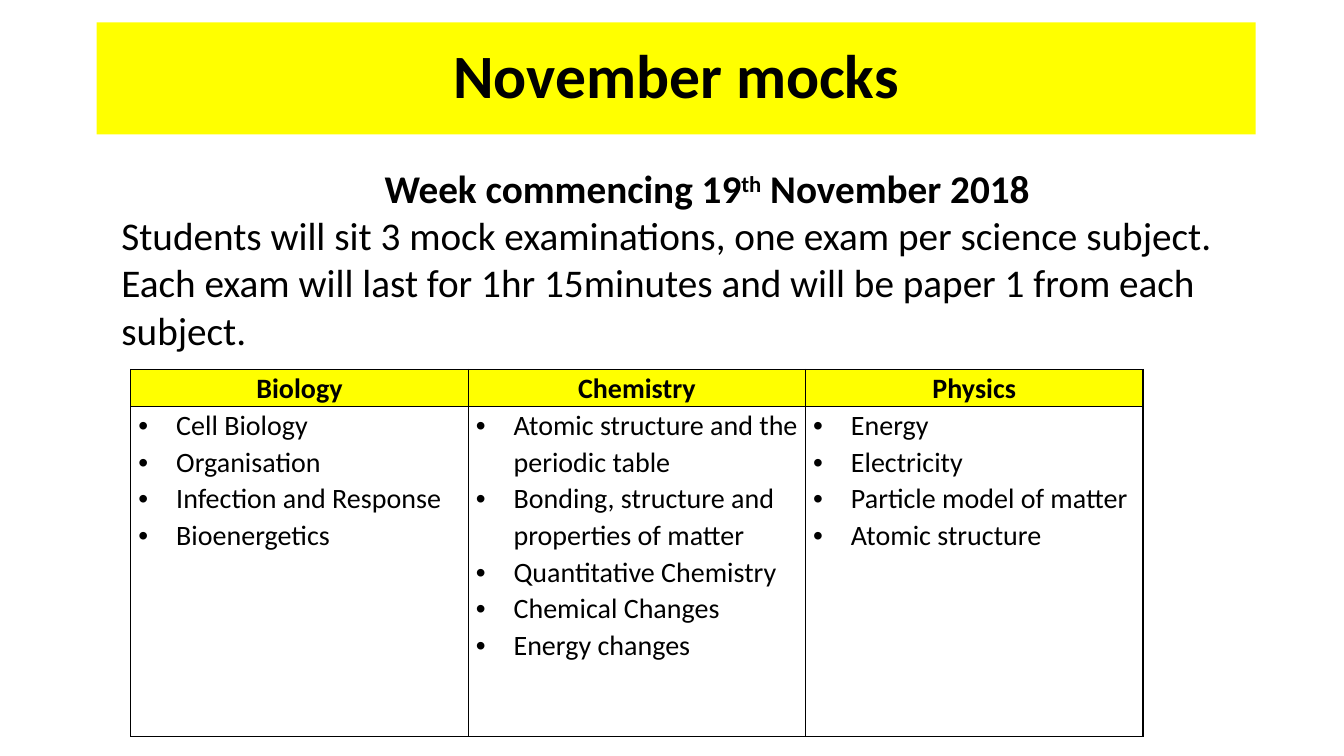
from lxml.etree import SubElement
from pptx import Presentation
from pptx.dml.color import RGBColor
from pptx.enum.text import MSO_ANCHOR, MSO_AUTO_SIZE, PP_ALIGN
from pptx.oxml.ns import qn
from pptx.util import Pt

BLACK = RGBColor(0x00, 0x00, 0x00)
YELLOW = RGBColor(0xFF, 0xFF, 0x00)

TOPICS = {
    "Biology": ["Cell Biology", "Organisation", "Infection and Response", "Bioenergetics"],
    "Chemistry": [
        "Atomic structure and the periodic table",
        "Bonding, structure and properties of matter",
        "Quantitative Chemistry",
        "Chemical Changes",
        "Energy changes",
    ],
    "Physics": ["Energy", "Electricity", "Particle model of matter", "Atomic structure"],
}


def add_text(paragraph, text, size, bold=False, superscript=False):
    run = paragraph.add_run()
    run.text = text
    run.font.name = "Calibri"
    run.font.size = Pt(size)
    run.font.bold = bold
    run.font.color.rgb = BLACK
    if superscript:
        run._r.get_or_add_rPr().set("baseline", "30000")


def format_paragraph(paragraph, align=PP_ALIGN.LEFT, spacing=1.0, bullet=None, indent=0):
    """Set alignment, line spacing and an optional hanging bullet."""
    properties = paragraph._p.get_or_add_pPr()
    properties.set("marL", str(Pt(indent)))
    properties.set("indent", str(-Pt(indent)))
    if bullet:
        SubElement(properties, qn("a:buFont"), typeface="Arial")
        SubElement(properties, qn("a:buChar"), char=bullet)
    else:
        SubElement(properties, qn("a:buNone"))
    paragraph.alignment = align
    paragraph.line_spacing = spacing
    paragraph.space_before = paragraph.space_after = Pt(0)


def add_paragraphs(frame, count):
    """Return the frame's first paragraph and enough new ones to make count."""
    return [frame.paragraphs[0]] + [frame.add_paragraph() for _ in range(count - 1)]


class MocksSlide:
    heading_size = 44
    body_size = 28
    table_size = 20
    table_spacing = 1.07

    def __init__(self, presentation):
        self.slide = presentation.slides.add_slide(presentation.slide_layouts[1])

    def place(self, shape, left, top, width, height):
        shape.left, shape.top = Pt(left), Pt(top)
        shape.width, shape.height = Pt(width), Pt(height)
        shape.text_frame.auto_size = MSO_AUTO_SIZE.NONE
        shape.text_frame.word_wrap = True

    def title(self, text, *box):
        shape = self.slide.shapes.title
        self.place(shape, *box)
        shape.fill.solid()
        shape.fill.fore_color.rgb = YELLOW
        shape.text_frame.vertical_anchor = MSO_ANCHOR.MIDDLE
        paragraph = shape.text_frame.paragraphs[0]
        format_paragraph(paragraph, PP_ALIGN.CENTER, 0.9)
        add_text(paragraph, text, self.heading_size, bold=True)

    def body(self, date_parts, details, *box):
        shape = self.slide.placeholders[1]
        self.place(shape, *box)
        shape.text_frame.vertical_anchor = MSO_ANCHOR.TOP
        date, description = add_paragraphs(shape.text_frame, 2)
        format_paragraph(date, PP_ALIGN.CENTER)
        for text, superscript in date_parts:
            add_text(date, text, self.body_size, bold=True, superscript=superscript)
        format_paragraph(description)
        add_text(description, details, self.body_size)

    def topic_table(self, topics, left, top, column_width, row_heights):
        width = column_width * len(topics)
        frame = self.slide.shapes.add_table(
            len(row_heights), len(topics), Pt(left), Pt(top), Pt(width), Pt(sum(row_heights))
        )
        table = frame.table
        table.first_row = table.horz_banding = False
        for row, height in zip(table.rows, row_heights):
            row.height = Pt(height)
        for index, (subject, items) in enumerate(topics.items()):
            table.columns[index].width = Pt(column_width)
            self.cell(table.cell(0, index), [subject], header=True)
            self.cell(table.cell(1, index), items)

    def cell(self, cell, lines, header=False):
        self.borders(cell)
        if header:
            cell.fill.solid()
            cell.fill.fore_color.rgb = YELLOW
        else:
            cell.fill.background()
        cell.margin_left = cell.margin_right = Pt(5.4)
        cell.margin_top = cell.margin_bottom = Pt(0)
        for paragraph, line in zip(add_paragraphs(cell.text_frame, len(lines)), lines):
            if header:
                format_paragraph(paragraph, PP_ALIGN.CENTER, self.table_spacing)
            else:
                format_paragraph(paragraph, spacing=self.table_spacing, bullet="•", indent=27)
            add_text(paragraph, line, self.table_size, bold=header)

    def borders(self, cell):
        properties = cell._tc.get_or_add_tcPr()
        for side in ("lnL", "lnR", "lnT", "lnB"):
            line = SubElement(properties, qn(f"a:{side}"), w=str(Pt(1)))
            fill = SubElement(line, qn("a:solidFill"))
            SubElement(fill, qn("a:srgbClr"), val=str(BLACK))


def main():
    presentation = Presentation()
    presentation.slide_width, presentation.slide_height = Pt(960), Pt(540)
    slide = MocksSlide(presentation)
    slide.title("November mocks", 69, 16, 828, 80)
    slide.body(
        [("Week commencing 19", False), ("th", True), (" November 2018", False)],
        "Students will sit 3 mock examinations, one exam per science subject. "
        "Each exam will last for 1hr 15minutes and will be paper 1 from each subject.",
        79.5, 114, 851, 143,
    )
    slide.topic_table(TOPICS, 93.5, 264, 241, [26.25, 236])
    presentation.save("out.pptx")


if __name__ == "__main__":
    main()
